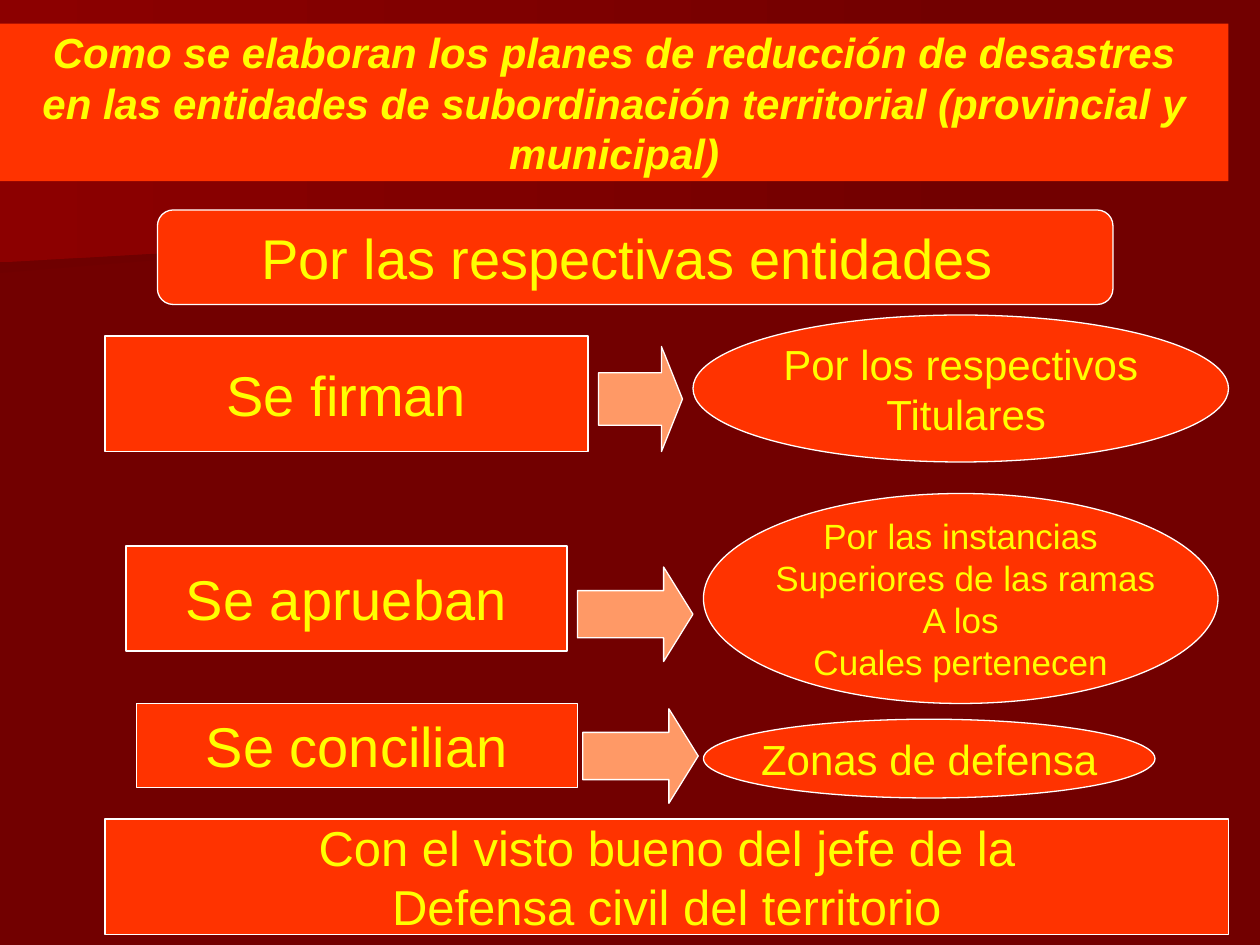
from pptx import Presentation
from pptx.dml.color import RGBColor
from pptx.enum.shapes import MSO_SHAPE as SHAPE
from pptx.enum.text import MSO_ANCHOR as ANCHOR, MSO_AUTO_SIZE as AUTO, PP_ALIGN as ALIGN
from pptx.util import Pt

DARK = RGBColor(0x72, 0x00, 0x00)
SHADE = RGBColor(0x6F, 0x00, 0x00)
GLOW = RGBColor(0x8C, 0x00, 0x00)
RED = RGBColor(0xFF, 0x33, 0x00)
ORANGE = RGBColor(0xFF, 0x99, 0x66)
YELLOW = RGBColor(0xFF, 0xFF, 0x00)
WHITE = RGBColor(0xFF, 0xFF, 0xFF)


def add_backdrop(s, points, start_color):
    """Draw an unlined polygon that fades from start_color into the background."""
    builder = s.shapes.build_freeform(*points[0], scale=Pt(1))
    builder.add_line_segments(points[1:], close=True)
    sp = builder.convert_to_shape()
    sp.shadow.inherit = False
    sp.line.fill.background()
    sp.fill.gradient()
    sp.fill.gradient_angle = 0
    for stop, color, position in zip(sp.fill.gradient_stops, (start_color, DARK), (0, 1)):
        stop.color.rgb = color
        stop.position = position


def write_text(sp, lines, size, bold=False, italic=False):
    """Write centred yellow paragraphs in the middle of a shape."""
    tf = sp.text_frame
    tf.vertical_anchor = ANCHOR.MIDDLE
    tf.text = "\n".join(lines)
    for p in tf.paragraphs:
        p.alignment = ALIGN.CENTER
        p.font.name = "Arial"
        p.font.size = Pt(size)
        p.font.color.rgb = YELLOW
        p.font.bold = bold
        p.font.italic = italic


def set_title(s, text, box):
    """Format the title placeholder as a red band above the backdrop."""
    title = s.shapes.title
    title.element.getparent().append(title.element)
    title.left, title.top, title.width, title.height = map(Pt, box)
    title.fill.solid()
    title.fill.fore_color.rgb = RED
    write_text(title, [], 24)
    title.text_frame.text = text
    title.text_frame.auto_size = AUTO.NONE
    p = title.text_frame.paragraphs[0]
    p.alignment = ALIGN.CENTER
    p.font.name = "Arial"
    p.font.size = Pt(24)
    p.font.color.rgb = YELLOW
    p.font.bold = p.font.italic = True


def add_outlined(s, kind, box, color):
    """Add a filled preset shape with a thin white outline."""
    sp = s.shapes.add_shape(kind, *map(Pt, box))
    sp.shadow.inherit = False
    sp.fill.solid()
    sp.fill.fore_color.rgb = color
    sp.line.color.rgb = WHITE
    sp.line.width = Pt(0.75)
    return sp


def add_label(s, kind, box, lines, size):
    """Add a red shape that holds unwrapped text."""
    sp = add_outlined(s, kind, box, RED)
    write_text(sp, lines, size)
    sp.text_frame.word_wrap = False


def add_arrow(s, box, head):
    """Add an orange block arrow with the given head ratio."""
    sp = add_outlined(s, SHAPE.RIGHT_ARROW, box, ORANGE)
    sp.adjustments[0] = 0.5
    sp.adjustments[1] = head


def main():
    """Build the slide and save it."""
    prs = Presentation()
    prs.slide_width, prs.slide_height = Pt(720), Pt(540)
    s = prs.slides.add_slide(prs.slide_layouts[5])
    s.background.fill.solid()
    s.background.fill.fore_color.rgb = DARK

    add_backdrop(s, [(560, 110), (0, 156), (0, 73), (561, 73), (560, 92)], SHADE)
    add_backdrop(s, [(570, 117), (0, 150), (0, 0), (570, 0)], GLOW)
    set_title(s, "Como se elaboran los planes de reducción de desastres\v"
              "en las entidades de subordinación territorial (provincial y municipal)",
              (0, 13.5, 702, 90))

    add_label(s, SHAPE.ROUNDED_RECTANGLE, (90, 120, 546, 54),
              ["Por las respectivas entidades "], 32)
    steps = [
        ("Se firman", (60, 192, 276, 66), (342, 198, 48, 60), 0.25,
         ["Por los respectivos", " Titulares"], (396, 180, 306, 84), 24),
        ("Se aprueban", (72, 312, 252, 60), (330, 324, 66, 54), 0.31,
         ["Por las instancias", " Superiores de las ramas", "A los", "Cuales pertenecen"],
         (402, 282, 294, 120), 20),
        ("Se concilian", (78, 402, 252, 48), (333, 405, 66, 54), 0.31,
         ["Zonas de defensa"], (402, 411, 258, 45), 24),
    ]
    for action, action_box, arrow_box, head, actors, actors_box, size in steps:
        add_label(s, SHAPE.RECTANGLE, action_box, [action], 32)
        add_arrow(s, arrow_box, head)
        add_label(s, SHAPE.OVAL, actors_box, actors, size)
    add_label(s, SHAPE.RECTANGLE, (60, 468, 642, 66),
              ["Con el visto bueno del jefe de la", "Defensa civil del territorio"], 28)

    prs.save("out.pptx")


if __name__ == "__main__":
    main()
